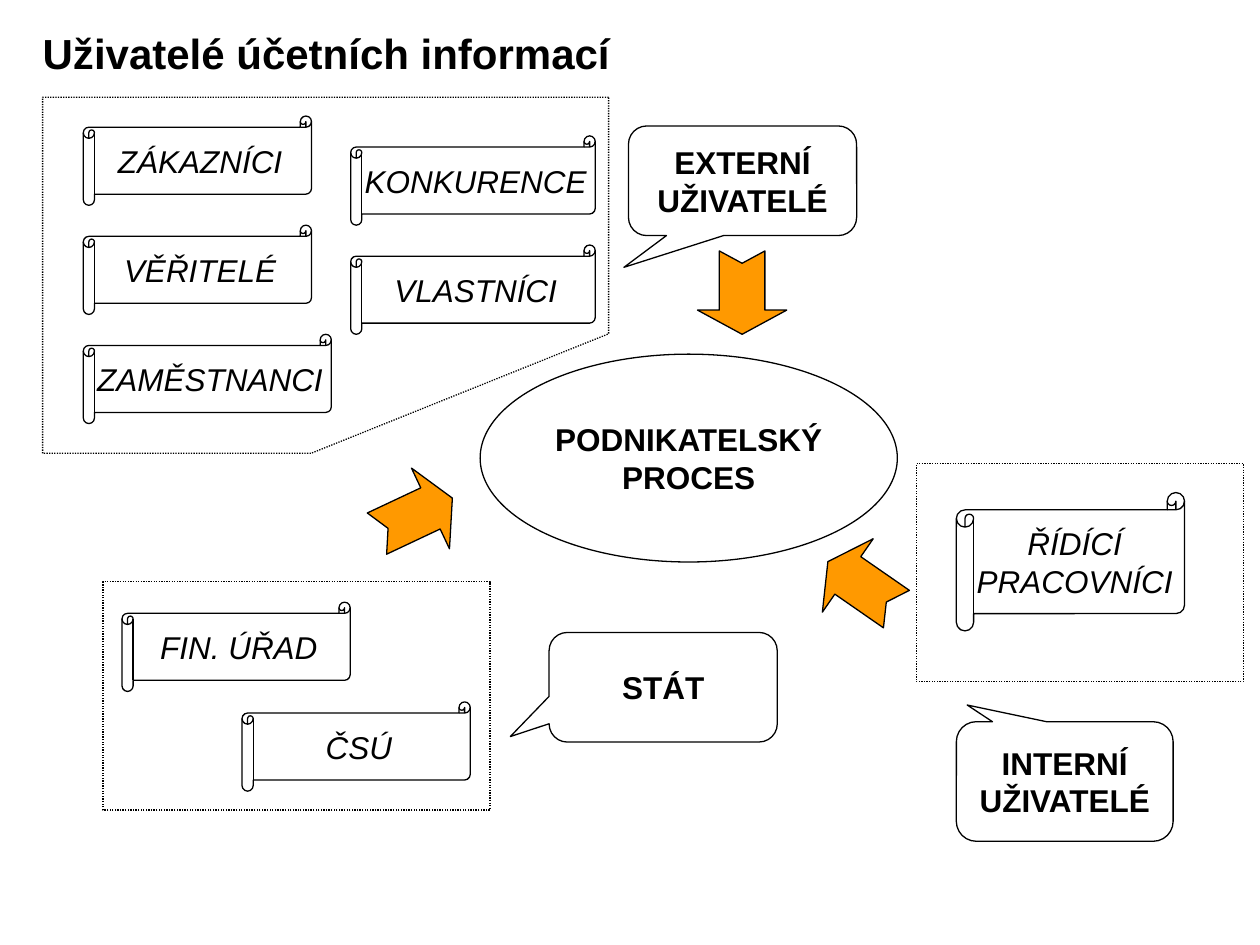
import pptx
import pptx.util
import pptx.dml.color
import pptx.enum.dml
import pptx.enum.shapes
import pptx.enum.text

Cm = pptx.util.Cm
SHAPE = pptx.enum.shapes.MSO_SHAPE
BLACK = pptx.dml.color.RGBColor(0x00, 0x00, 0x00)
ORANGE = pptx.dml.color.RGBColor(0xFF, 0x99, 0x00)


def outline(shape, dotted=False):
    shape.shadow.inherit = False
    shape.fill.background()
    shape.line.color.rgb = BLACK
    shape.line.width = pptx.util.Pt(0.75)
    if dotted:
        shape.line.dash_style = pptx.enum.dml.MSO_LINE.ROUND_DOT


def write(frame, lines, size=18, bold=False, italic=False,
          align=pptx.enum.text.PP_ALIGN.CENTER, wrap=True):
    frame.word_wrap = wrap
    frame.vertical_anchor = pptx.enum.text.MSO_ANCHOR.MIDDLE
    for index, line in enumerate(lines):
        paragraph = frame.add_paragraph() if index else frame.paragraphs[0]
        paragraph.alignment = align
        run = paragraph.add_run()
        run.text = line
        run.font.name = "Arial"
        run.font.size = pptx.util.Pt(size)
        run.font.bold = bold
        run.font.italic = italic
        run.font.color.rgb = BLACK


presentation = pptx.Presentation()
presentation.slide_width = Cm(25.4)
presentation.slide_height = Cm(19.05)
slide = presentation.slides.add_slide(presentation.slide_layouts[5])
shapes = slide.shapes

title = shapes.title
title.left, title.top, title.width, title.height = Cm(0.86), Cm(0.28), Cm(23.5), Cm(1.68)
title.text_frame.margin_left = title.text_frame.margin_right = 0
write(title.text_frame, ["Uživatelé účetních informací"], size=24, bold=True,
      align=pptx.enum.text.PP_ALIGN.LEFT)
title.text_frame.paragraphs[0].line_spacing = 0.95

external_corners = [(12.27, 1.96), (0.86, 1.96), (0.86, 9.14), (6.27, 9.14), (12.27, 6.73)]
corners = [(Cm(x), Cm(y)) for x, y in external_corners]
builder = shapes.build_freeform(*corners[0], scale=1.0)
builder.add_line_segments(corners[1:], close=True)
outline(builder.convert_to_shape(), dotted=True)

group_areas = [(2.08, 11.73, 7.8, 4.6), (18.47, 9.35, 6.6, 4.39)]
for area in group_areas:
    outline(shapes.add_shape(SHAPE.RECTANGLE, *map(Cm, area)), dotted=True)

process = shapes.add_shape(SHAPE.OVAL, Cm(9.68), Cm(7.14), Cm(8.41), Cm(4.19))
outline(process)
write(process.text_frame, ["PODNIKATELSKÝ", "PROCES"], bold=True)

row_step = 2.2
users = [
    (["ZÁKAZNÍCI"], 1.68, 2.34, 4.6, 1.8),
    (["VĚŘITELÉ"], 1.68, 2.34 + row_step, 4.6, 1.8),
    (["ZAMĚSTNANCI"], 1.68, 2.34 + 2 * row_step, 5, 1.8),
    (["KONKURENCE"], 7.07, 2.74, 4.93, 1.8),
    (["VLASTNÍCI"], 7.07, 2.74 + row_step, 4.93, 1.8),
    (["FIN. ÚŘAD"], 2.46, 12.14, 4.6, 1.8),
    (["ČSÚ"], 4.88, 14.15, 4.6, 1.8),
    (["ŘÍDÍCÍ", "PRACOVNÍCI"], 19.28, 9.93, 4.6, 2.79),
]
for lines, *box in users:
    scroll = shapes.add_shape(SHAPE.HORIZONTAL_SCROLL, *map(Cm, box))
    outline(scroll)
    write(scroll.text_frame, lines, italic=True, wrap=False)

callouts = [
    ("EXTERNÍ UŽIVATELÉ", (12.67, 2.54, 4.6, 2.21), (-0.52, 0.79)),
    ("STÁT", (11.07, 12.75, 4.6, 2.21), (-0.67, 0.45)),
    ("INTERNÍ UŽIVATELÉ", (19.28, 14.55, 4.37, 2.41), (-0.45, -0.64)),
]
for label, box, tip in callouts:
    callout = shapes.add_shape(SHAPE.ROUNDED_RECTANGULAR_CALLOUT, *map(Cm, box))
    callout.adjustments[0], callout.adjustments[1] = tip
    outline(callout)
    write(callout.text_frame, [label], bold=True)

arrows = [(14.12, 5, 90), (7.52, 9.5, 334.8), (16.54, 10.9, 214.7)]
for left, top, angle in arrows:
    arrow = shapes.add_shape(SHAPE.NOTCHED_RIGHT_ARROW, Cm(left), Cm(top), Cm(1.68), Cm(1.8))
    arrow.adjustments[0], arrow.adjustments[1] = 0.51, 0.29
    arrow.rotation = angle
    outline(arrow)
    arrow.fill.solid()
    arrow.fill.fore_color.rgb = ORANGE

presentation.save("out.pptx")
